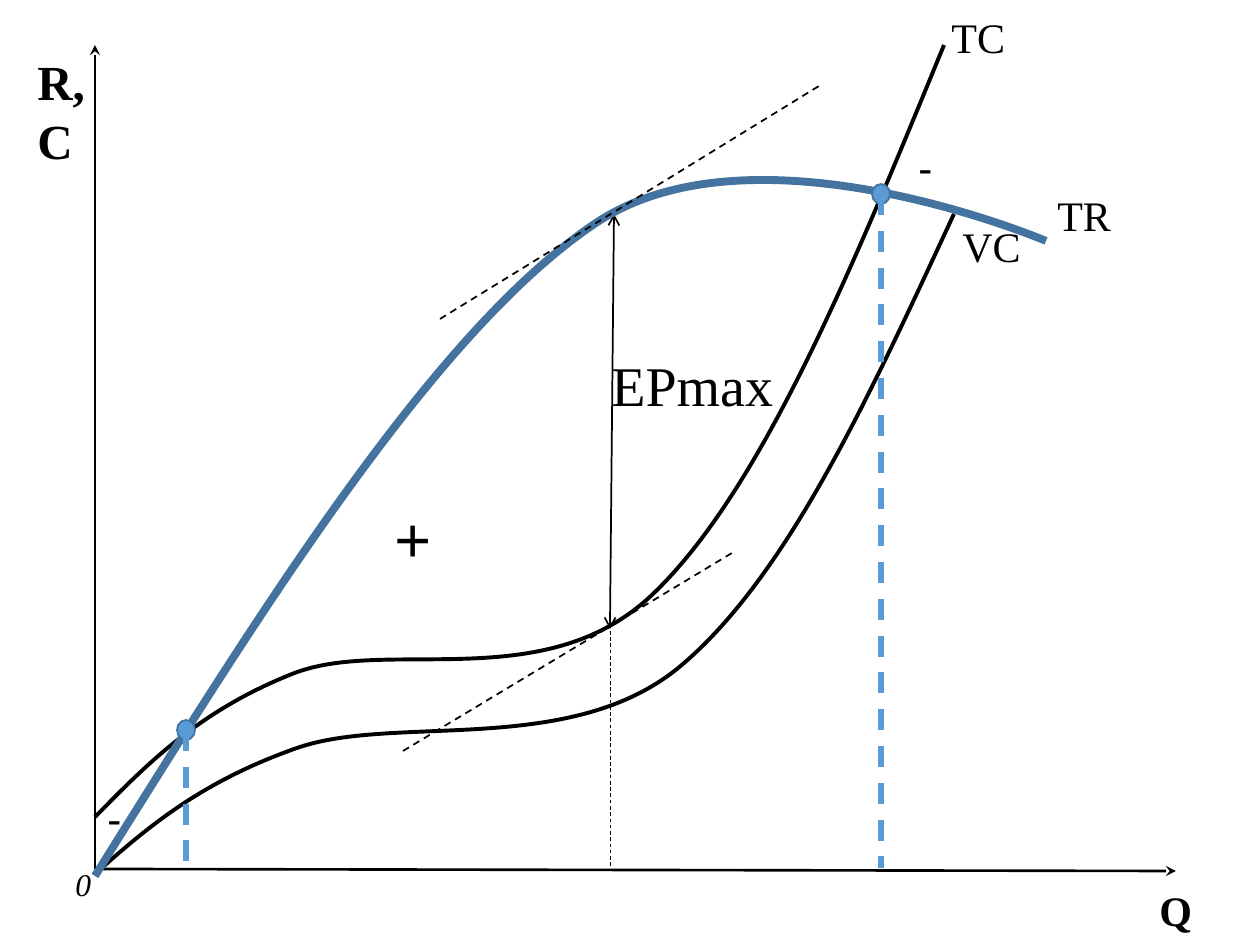
from lxml import etree
from pptx import Presentation
from pptx import util as u
from pptx.dml.color import RGBColor
from pptx.enum import dml, shapes, text
from pptx.oxml.ns import qn

PX = 914400 / 126  # EMU in one px
THEME = {
    "ink": "000000", "blue": "5B9BD5", "navy": "43739E",
    "serif": "Times New Roman", "sans": "Arial",
    "tiny": 18, "label": 24, "axis": 28, "big": 32, "plus": 36,
}

# Curves: start point, then Bezier triples (two handles and an end)
COSTS = [
    [(96, 873), (147, 828), (200, 782), (297, 748),
     (394, 714), (567, 757), (677, 669),
     (786, 580), (869, 397), (954, 214)],
    [(95, 817), (147, 764), (199, 711), (292, 674),
     (386, 636), (546, 698), (654, 593),
     (762, 489), (853, 267), (944, 45)],
]
REVENUE = [(95, 876), (266, 602), (437, 329), (596, 223),
           (644, 191), (703, 180), (763, 180),
           (903, 180), (1046, 241), (1046, 241)]

# Lines: from, to, width, dashed, head, tail
AXES = [
    ((95, 869), (95, 45), 1.5, False, None, "stealth"),
    ((95, 869), (1176, 871), 1.5, False, None, "stealth"),
]
GUIDES = [
    ((614, 214), (610, 629), 1, False, "arrow", "arrow"),  # largest profit
    ((610, 631), (610, 868), 0.5, True, None, None),
    ((403, 751), (732, 553), 1, True, None, None),  # tangent to TC
    ((440, 319), (819, 86), 1, True, None, None),  # tangent to TR
]
EVENS = [(186, 730), (881, 194)]  # break-even points
BASE, DOT = 868, (18, 20)

# Labels: text, box, size, font, style, wrap
LABELS = [
    ("R,\nC", (25, 45, 73, 131), "axis", "serif", "b", False),
    ("Q", (1147, 878, 58, 64), "label", "serif", "b", False),
    ("0", (63, 859, 42, 50), "tiny", "serif", "i", False),
    ("TR", (1045, 183, 101, 63), "label", "serif", "", True),
    ("EPmax", (599, 344, 200, 81), "big", "serif", "", True),
    ("TC", (939, 5, 79, 63), "label", "serif", "", False),
    ("VC", (950, 214, 107, 63), "label", "serif", "", True),
    ("+", (382, 493, 69, 89), "plus", "sans", "", True),
    ("-", (95, 786, 69, 63), "label", "sans", "", True),
    ("-", (906, 135, 69, 63), "label", "sans", "", True),
]


def emu(*vals):
    return [round(v * PX) for v in vals]


def color(name):
    return RGBColor.from_string(THEME[name])


def stroke(shape, name, width):
    shape.line.color.rgb = color(name)
    shape.line.width = u.Pt(width)


def add_line(start, end, width, dash=False, head=None, tail=None, name="ink"):
    line = slide.shapes.add_connector(
        shapes.MSO_CONNECTOR.STRAIGHT, *emu(*start, *end))
    stroke(line, name, width)
    if dash:
        line.line.dash_style = dml.MSO_LINE.DASH
    props = line._element.spPr
    for tag, kind in (("a:headEnd", head), ("a:tailEnd", tail)):
        if kind:
            etree.SubElement(props.find(qn("a:ln")), qn(tag), type=kind)
    etree.SubElement(props, qn("a:effectLst"))


def add_curve(points, name, width):
    form = slide.shapes.build_freeform(*points[0], scale=PX)
    form.add_line_segments(points[1:], close=False)
    curve = form.convert_to_shape()
    curve.shadow.inherit = False
    curve.fill.background()
    stroke(curve, name, width)
    # Turn each three straight segments into one Bezier segment
    segs = list(curve._element.iter(qn("a:lnTo")))
    for i in range(0, len(segs), 3):
        bez = etree.Element(qn("a:cubicBezTo"))
        segs[i].addprevious(bez)
        for seg in segs[i:i + 3]:
            bez.append(seg[0])
            seg.getparent().remove(seg)


def add_label(words, box, size, font, style, wrap):
    label = slide.shapes.add_textbox(*emu(*box))
    frame = label.text_frame
    frame.text = words
    frame.word_wrap = wrap
    frame.auto_size = text.MSO_AUTO_SIZE.SHAPE_TO_FIT_TEXT
    for para in frame.paragraphs:
        for run in para.runs:
            run.font.name = THEME[font]
            run.font.size = u.Pt(THEME[size])
            run.font.color.rgb = color("ink")
            run.font.bold = style == "b"
            run.font.italic = style == "i"


def add_dot(x, y):
    w, h = DOT
    dot = slide.shapes.add_shape(
        shapes.MSO_SHAPE.OVAL, *emu(x - w / 2, y - h / 2, w, h))
    dot.shadow.inherit = False
    dot.fill.solid()
    dot.fill.fore_color.rgb = color("blue")
    stroke(dot, "navy", 1)


deck = Presentation()
deck.slide_width, deck.slide_height = emu(1260, 945)
slide = deck.slides.add_slide(deck.slide_layouts[6])

# Axes, cost curves and guides
for axis in AXES:
    add_line(*axis)
for cost in COSTS:
    add_curve(cost, "ink", 2.25)
for guide in GUIDES[:-1]:
    add_line(*guide)

# Revenue curve with its tangent on top
add_curve(REVENUE, "navy", 4.5)
add_line(*GUIDES[-1])

# Break-even points and their drops to the axis
for x, y in EVENS:
    add_dot(x, y)
for x, y in EVENS:
    add_line((x, y), (x, BASE), 3, True, name="blue")

# Labels
for label in LABELS:
    add_label(*label)

deck.save("out.pptx")
